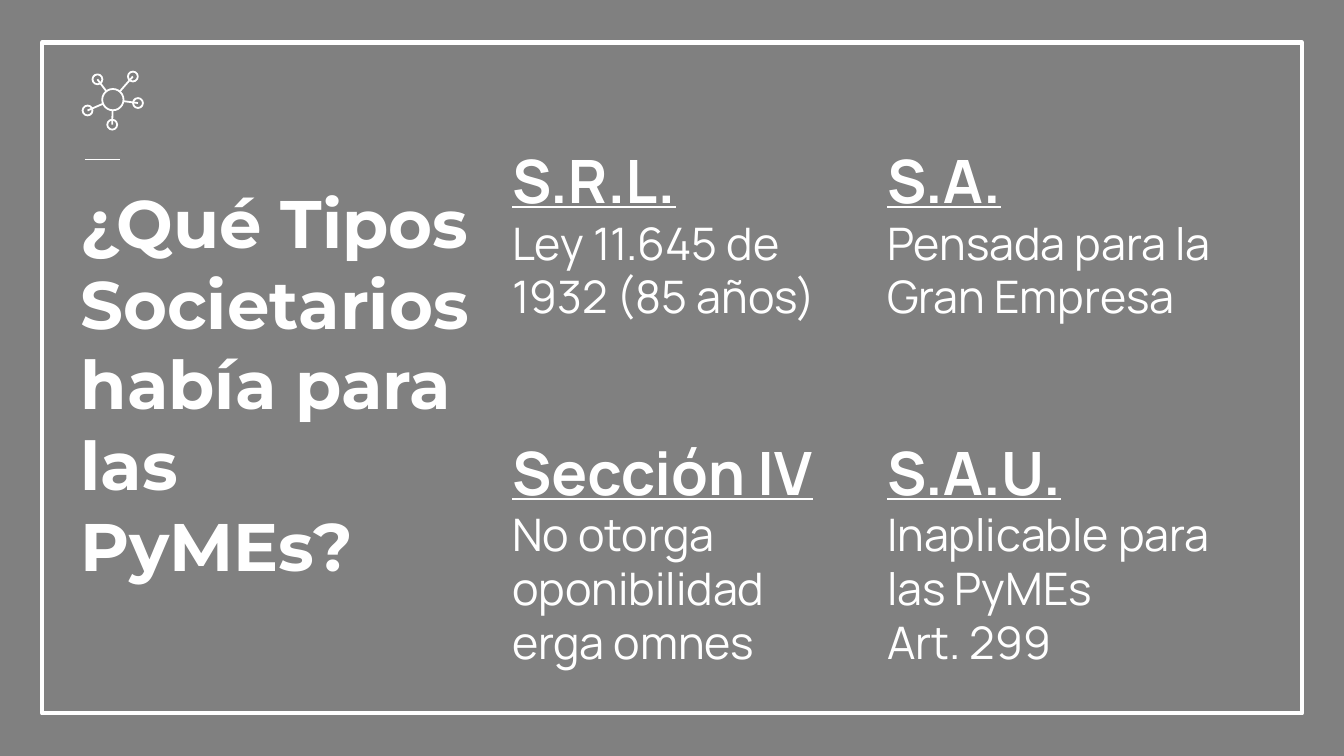
import dataclasses

import pptx
import pptx.dml.color
import pptx.enum.shapes
import pptx.enum.text
import pptx.oxml
import pptx.oxml.ns
import pptx.util

COLORS = {"background": "808080", "foreground": "FFFFFF"}
TITLE_FONT = "Montserrat"
BODY_FONT = "Manrope"
ICON_LINE = 0.96


@dataclasses.dataclass(frozen=True)
class Box:
    left: float
    top: float
    width: float
    height: float


@dataclasses.dataclass(frozen=True)
class CompanyType:
    placeholder_index: int
    box: Box
    heading: str
    details: tuple[str, ...]


@dataclasses.dataclass(frozen=True)
class Node:
    center: tuple[float, float]
    hub_edge: tuple[float, float]


LEFT_COLUMN, RIGHT_COLUMN = 267.1, 468
TOP_ROW, BOTTOM_ROW = 69.8, 226.1

COMPANY_TYPES = (
    CompanyType(1, Box(LEFT_COLUMN, TOP_ROW, 189.4, 133.9), "S.R.L.",
                ("Ley 11.645 de 1932 (85 años)",)),
    CompanyType(2, Box(RIGHT_COLUMN, TOP_ROW, 219.6, 133.9), "S.A.",
                ("Pensada para la Gran Empresa",)),
    CompanyType(3, Box(LEFT_COLUMN, BOTTOM_ROW, 192.2, 135.4), "Sección IV",
                ("No otorga oponibilidad erga omnes",)),
    CompanyType(4, Box(RIGHT_COLUMN, BOTTOM_ROW, 210.2, 135.4), "S.A.U.",
                ("Inaplicable para las PyMEs", "Art. 299")),
)

HUB_CENTER = (60.5, 53.4)
HUB_DIAMETER = 11.4
NODE_DIAMETER = 5.3
NODES = (
    Node((71.2, 41), (64.2, 49)),
    Node((52.2, 42.5), (56.9, 48.8)),
    Node((46.9, 59.2), (55.2, 55.6)),
    Node((60.1, 66.8), (60.3, 59.2)),
    Node((73.9, 55.2), (66.2, 54.2)),
)


def color(name: str) -> pptx.dml.color.RGBColor:
    return pptx.dml.color.RGBColor.from_string(COLORS[name])


def place(shape, box: Box) -> None:
    shape.left = pptx.util.Pt(box.left)
    shape.top = pptx.util.Pt(box.top)
    shape.width = pptx.util.Pt(box.width)
    shape.height = pptx.util.Pt(box.height)


def draw_outline(slide, preset, box: Box, line_width: float) -> None:
    shape = slide.shapes.add_shape(preset, 0, 0, 0, 0)
    place(shape, box)
    shape.shadow.inherit = False
    shape.fill.background()
    shape.line.color.rgb = color("foreground")
    shape.line.width = pptx.util.Pt(line_width)


def draw_circle(slide, center: tuple[float, float], diameter: float) -> None:
    left, top = (coordinate - diameter / 2 for coordinate in center)
    draw_outline(slide, pptx.enum.shapes.MSO_SHAPE.OVAL,
                 Box(left, top, diameter, diameter), ICON_LINE)


def draw_line(slide, start: tuple[float, float], end: tuple[float, float],
              line_width: float) -> None:
    connector = slide.shapes.add_connector(
        pptx.enum.shapes.MSO_CONNECTOR.STRAIGHT,
        *(pptx.util.Pt(coordinate) for coordinate in start + end))
    connector.line.color.rgb = color("foreground")
    connector.line.width = pptx.util.Pt(line_width)
    properties = connector._element.spPr
    properties.append(pptx.oxml.parse_xml(
        f"<a:effectLst {pptx.oxml.ns.nsdecls('a')}/>"))


def draw_network_icon(slide) -> None:
    draw_circle(slide, HUB_CENTER, HUB_DIAMETER)
    for node in NODES:
        draw_circle(slide, node.center, NODE_DIAMETER)
        draw_line(slide, node.center, node.hub_edge, ICON_LINE)


def prepare_text_frame(shape, box: Box):
    place(shape, box)
    text_frame = shape.text_frame
    text_frame.word_wrap = True
    text_frame.auto_size = pptx.enum.text.MSO_AUTO_SIZE.NONE
    text_frame.vertical_anchor = pptx.enum.text.MSO_ANCHOR.TOP
    for side in ("left", "top", "right", "bottom"):
        setattr(text_frame, f"margin_{side}", pptx.util.Pt(7.2))
    return text_frame


def format_paragraph(paragraph, font_name: str, size: float, bold: bool,
                     underline: bool = False) -> None:
    properties = paragraph._p.get_or_add_pPr()
    properties.set("marL", "0")
    properties.set("indent", "0")
    properties.append(pptx.oxml.parse_xml(
        f"<a:buNone {pptx.oxml.ns.nsdecls('a')}/>"))
    paragraph.alignment = pptx.enum.text.PP_ALIGN.LEFT
    paragraph.space_before = pptx.util.Pt(0)
    for run in paragraph.runs:
        run.font.name = font_name
        run.font.size = pptx.util.Pt(size)
        run.font.bold = bold
        run.font.underline = underline
        run.font.color.rgb = color("foreground")


def write_title(slide) -> None:
    text_frame = prepare_text_frame(slide.shapes.title,
                                    Box(36, 90, 222.5, 244.8))
    text_frame.text = "¿Qué Tipos Societarios había para las PyMEs?"
    format_paragraph(text_frame.paragraphs[0], TITLE_FONT, 36, True)


def write_company_type(slide, company_type: CompanyType) -> None:
    placeholder = slide.placeholders[company_type.placeholder_index]
    text_frame = prepare_text_frame(placeholder, company_type.box)
    text_frame.text = "\n".join((company_type.heading,) + company_type.details)
    heading, *details = text_frame.paragraphs
    format_paragraph(heading, BODY_FONT, 32, True, underline=True)
    for detail in details:
        format_paragraph(detail, BODY_FONT, 24, False)


def main() -> None:
    presentation = pptx.Presentation()
    presentation.slide_width = pptx.util.Pt(720)
    presentation.slide_height = pptx.util.Pt(405)
    slide = presentation.slides.add_slide(
        presentation.slide_layouts.get_by_name("Comparison"))
    slide.background.fill.solid()
    slide.background.fill.fore_color.rgb = color("background")

    draw_outline(slide, pptx.enum.shapes.MSO_SHAPE.RECTANGLE,
                 Box(22.5, 22.8, 675, 359.4), 2.25)
    draw_line(slide, (45.4, 85.4), (64.1, 85.4), 0.75)
    draw_network_icon(slide)
    write_title(slide)
    for company_type in COMPANY_TYPES:
        write_company_type(slide, company_type)
    presentation.save("out.pptx")


if __name__ == "__main__":
    main()
